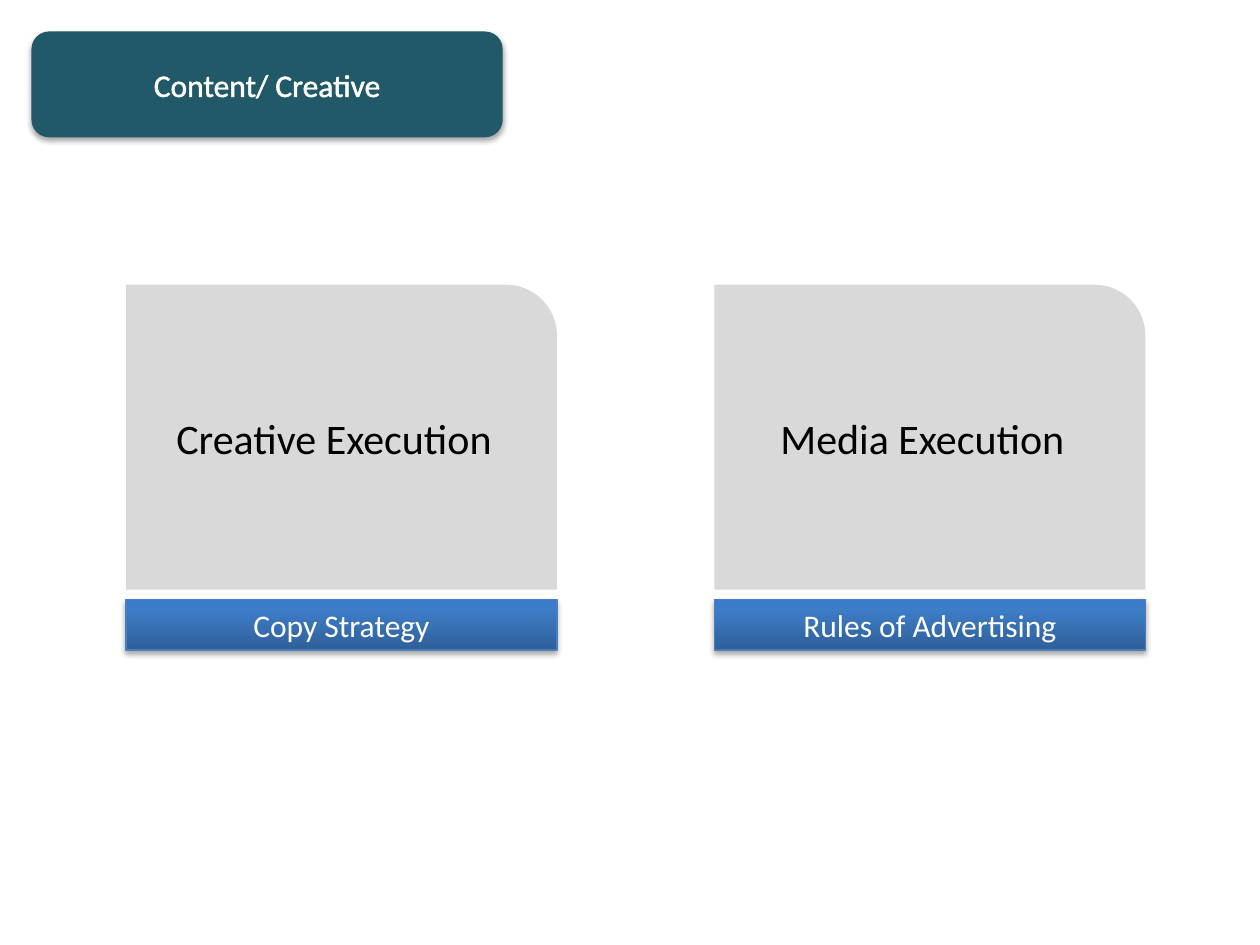
from lxml import etree
from pptx import Presentation
from pptx.dml.color import RGBColor
from pptx.enum.shapes import MSO_SHAPE
from pptx.enum.text import MSO_ANCHOR, MSO_AUTO_SIZE, PP_ALIGN
from pptx.oxml.ns import qn
from pptx.util import Inches, Pt

ROUND = MSO_SHAPE.ROUNDED_RECTANGLE
CARD = MSO_SHAPE.ROUND_1_RECTANGLE
RECT = MSO_SHAPE.RECTANGLE
CENTER = PP_ALIGN.CENTER
MIDDLE = MSO_ANCHOR.MIDDLE
GROW = MSO_AUTO_SIZE.SHAPE_TO_FIT_TEXT

STOPS = [(0, "2F5F99"), (80, "3D7CC7"), (100, "3A7CCB")]
COLUMNS = [
    (1, "Creative Execution", "Copy Strategy"),
    (5.67, "Media Execution", "Rules of Advertising"),
]
WIDTH = 3.42


def color(code):
    return RGBColor.from_string(code)


def add_tag(parent, tag, **attrs):
    node = etree.SubElement(parent, qn(tag))
    for key, value in attrs.items():
        node.set(key, str(value))
    return node


def add_box(slide, kind, box, text, size, ink):
    shape = slide.shapes.add_shape(kind, *[Inches(v) for v in box])
    shape.shadow.inherit = False
    shape.line.fill.background()
    frame = shape.text_frame
    frame.text = text
    frame.word_wrap = True
    frame.vertical_anchor = MIDDLE
    para = frame.paragraphs[0]
    para.alignment = CENTER
    font = para.runs[0].font
    font.name = "Calibri"
    font.size = Pt(size)
    font.color.rgb = color(ink)
    return shape


def paint(shape, code):
    shape.fill.solid()
    shape.fill.fore_color.rgb = color(code)


def shade(shape):
    effects = shape._element.spPr.find(qn("a:effectLst"))
    shadow = add_tag(effects, "a:outerShdw", blurRad=Pt(3.1), dist=Pt(1.8),
                     dir=5400000, rotWithShape=0)
    tint = add_tag(shadow, "a:srgbClr", val="000000")
    add_tag(tint, "a:alpha", val=35000)


def blend(shape, stops):
    shape.fill.gradient()
    shape.fill.gradient_angle = 90
    group = shape._element.spPr.find(qn("a:gradFill")).find(qn("a:gsLst"))
    for old in list(group):
        group.remove(old)
    for place, code in stops:
        stop = add_tag(group, "a:gs", pos=place * 1000)
        add_tag(stop, "a:srgbClr", val=code)


def outline(run, code, width):
    props = run.font._element
    line = add_tag(props, "a:ln", w=Pt(width))
    add_tag(add_tag(line, "a:solidFill"), "a:srgbClr", val=code)
    props.insert(0, line)


def add_title(slide, text):
    shape = add_box(slide, ROUND, (0.25, 0.25, 3.74, 0.84), text, 18, "FFFFFF")
    paint(shape, "215968")
    shade(shape)
    frame = shape.text_frame
    frame.word_wrap = False
    frame.margin_left = frame.margin_right = Inches(0.05)
    frame.margin_top = frame.margin_bottom = Inches(0.05)
    outline(frame.paragraphs[0].runs[0], "FFFFFF", 1.45)


def add_card(slide, left, text):
    shape = add_box(slide, CARD, (left, 2.26, WIDTH, 2.42), text, 24, "000000")
    paint(shape, "D9D9D9")


def add_bar(slide, left, text):
    shape = add_box(slide, RECT, (left, 4.76, WIDTH, 0.4), text, 18, "FFFFFF")
    blend(shape, STOPS)
    shape.line.color.rgb = color("4B7EBC")
    shape.line.width = Pt(0.75)
    shade(shape)
    shape.text_frame.auto_size = GROW


def main():
    deck = Presentation()
    deck.slide_width = Inches(10)
    deck.slide_height = Inches(7.5)
    slide = deck.slides.add_slide(deck.slide_layouts[6])
    add_title(slide, "Content/ Creative")
    for left, head, base in COLUMNS:
        add_card(slide, left, head)
        add_bar(slide, left, base)
    deck.save("out.pptx")


if __name__ == "__main__":
    main()
